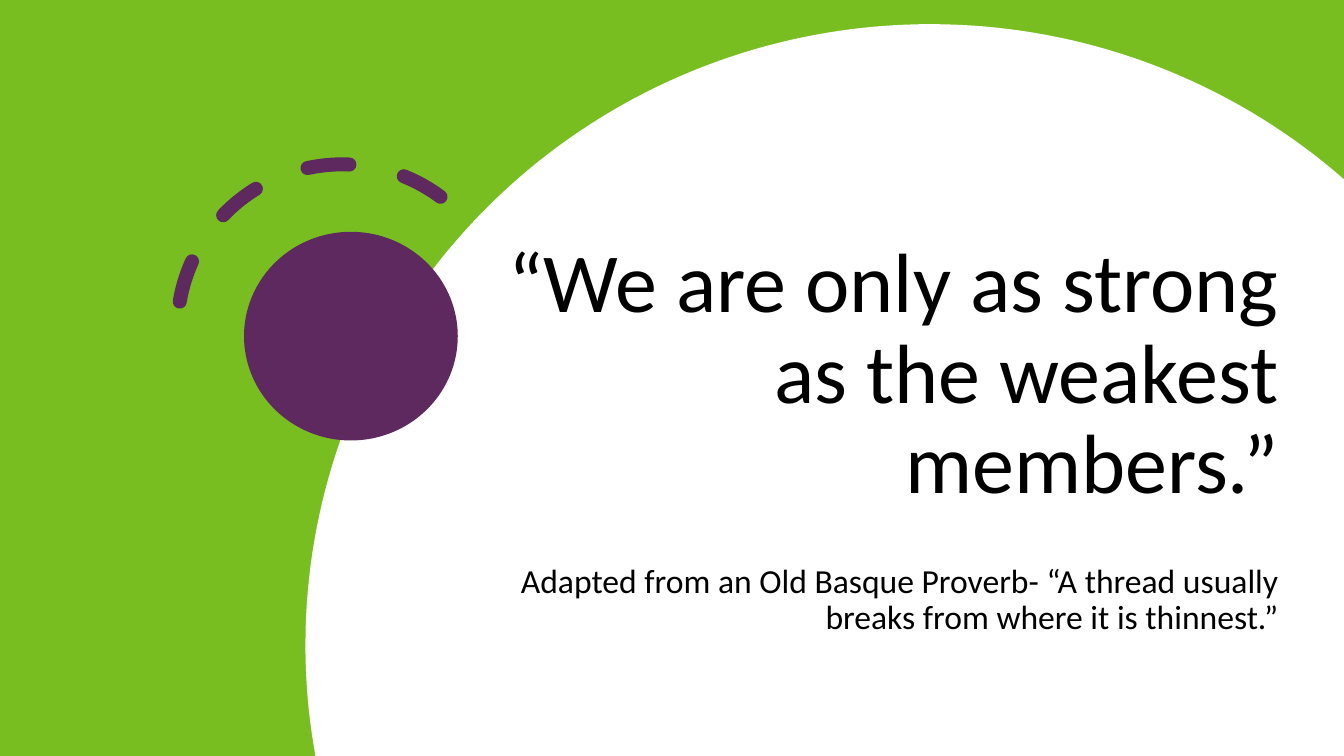
"""Builds a quotation slide with a large white circle on green."""
from dataclasses import dataclass
from math import acos, asin, cos, pi, sin

from lxml import etree
from pptx import Presentation
from pptx.dml.color import RGBColor
from pptx.enum.dml import MSO_LINE
from pptx.enum.shapes import MSO_SHAPE
from pptx.enum.text import MSO_ANCHOR, MSO_AUTO_SIZE, PP_ALIGN
from pptx.oxml.ns import qn
from pptx.util import Inches, Pt

RECT, OVAL, ARC = MSO_SHAPE.RECTANGLE, MSO_SHAPE.OVAL, MSO_SHAPE.ARC
BOTTOM, MIDDLE = MSO_ANCHOR.BOTTOM, MSO_ANCHOR.MIDDLE
RIGHT, DASH, NO_FIT = PP_ALIGN.RIGHT, MSO_LINE.DASH, MSO_AUTO_SIZE.NONE


@dataclass(frozen=True)
class Theme:
    """Colours, font and type sizes."""
    green: RGBColor = RGBColor(0x78, 0xBE, 0x21)
    purple: RGBColor = RGBColor(0x5D, 0x29, 0x5F)
    white: RGBColor = RGBColor(0xFF, 0xFF, 0xFF)
    black: RGBColor = RGBColor(0, 0, 0)
    font: str = "Calibri"
    quote: int = 60
    source: int = 24
    dash: int = 10


THEME = Theme()
WIDTH, HEIGHT = 13.33, 7.5
QUOTE = "“We are only as strong as the weakest members.”"
SOURCE = ("Adapted from an Old Basque Proverb- “A thread usually "
          "breaks from where it is thinnest.”")
QUOTE_BOX = (4.42, 2.12, 8.36, 3.01)
SOURCE_BOX = (4.42, 5.23, 8.36, 1.45)
DISC_BOX = (2.42, 2.3, 2.12, 2.07)
ARC_BOX = (1.76, 1.63, 3.27, 3.27)
ARC_ENDS, ARC_TURN = (144.56, 2.28), 308.7
CIRCLE_CENTRE, CIRCLE_RADII, CIRCLE_STEPS = (9.23, 6.4), (6.2, 6.16), 120


def paint(sp, color):
    sp.shadow.inherit = False
    sp.fill.solid()
    sp.fill.fore_color.rgb = color
    sp.line.fill.background()


def add_filled(s, kind, box, color):
    paint(s.shapes.add_shape(kind, *map(Inches, box)), color)


def add_cropped_circle(s):
    (cx, cy), (rx, ry) = CIRCLE_CENTRE, CIRCLE_RADII
    start = pi + asin((HEIGHT - cy) / ry)
    end = acos((WIDTH - cx) / rx)
    angles = [start + (end - start) * i / CIRCLE_STEPS for i in range(CIRCLE_STEPS + 1)]
    points = [(Inches(cx + rx * cos(a)), Inches(cy - ry * sin(a))) for a in angles]
    builder = s.shapes.build_freeform(*points[0])
    builder.add_line_segments(points[1:] + [(Inches(WIDTH), Inches(HEIGHT))], close=True)
    paint(builder.convert_to_shape(), THEME.white)


def add_dashed_arc(s):
    sp = s.shapes.add_shape(ARC, *map(Inches, ARC_BOX))
    sp.shadow.inherit = False
    sp.fill.background()
    sp.rotation = ARC_TURN
    sp.adjustments[0], sp.adjustments[1] = ARC_ENDS
    sp.line.color.rgb = THEME.purple
    sp.line.width = Pt(THEME.dash)
    sp.line.dash_style = DASH
    ln = sp.element.spPr.find(qn("a:ln"))
    ln.set("cap", "rnd")
    etree.SubElement(ln, qn("a:round"))


def fill_placeholder(sp, text, box, size, anchor, before=0):
    sp.left, sp.top, sp.width, sp.height = map(Inches, box)
    tf = sp.text_frame
    tf.text = text
    tf.word_wrap = True
    tf.auto_size = NO_FIT
    tf.vertical_anchor = anchor
    p = tf.paragraphs[0]
    p.alignment = RIGHT
    p.line_spacing = 0.9
    p.space_before = Pt(before)
    p.font.name = THEME.font
    p.font.size = Pt(size)
    p.font.color.rgb = THEME.black
    pPr = p.runs[0].font and p._p.get_or_add_pPr()
    pPr.set("marL", "0")
    pPr.set("indent", "0")
    pPr.find(qn("a:defRPr")).addprevious(etree.Element(qn("a:buNone")))
    sp.element.getparent().append(sp.element)


def main():
    prs = Presentation()
    prs.slide_width, prs.slide_height = Inches(WIDTH), Inches(HEIGHT)
    s = prs.slides.add_slide(prs.slide_layouts[1])
    add_filled(s, RECT, (0, 0, WIDTH, HEIGHT), THEME.green)
    add_cropped_circle(s)
    add_filled(s, OVAL, DISC_BOX, THEME.purple)
    add_dashed_arc(s)
    title, body = s.shapes.title, s.placeholders[1]
    fill_placeholder(title, QUOTE, QUOTE_BOX, THEME.quote, BOTTOM)
    fill_placeholder(body, SOURCE, SOURCE_BOX, THEME.source, MIDDLE, 10)
    prs.save("out.pptx")


if __name__ == "__main__":
    main()
